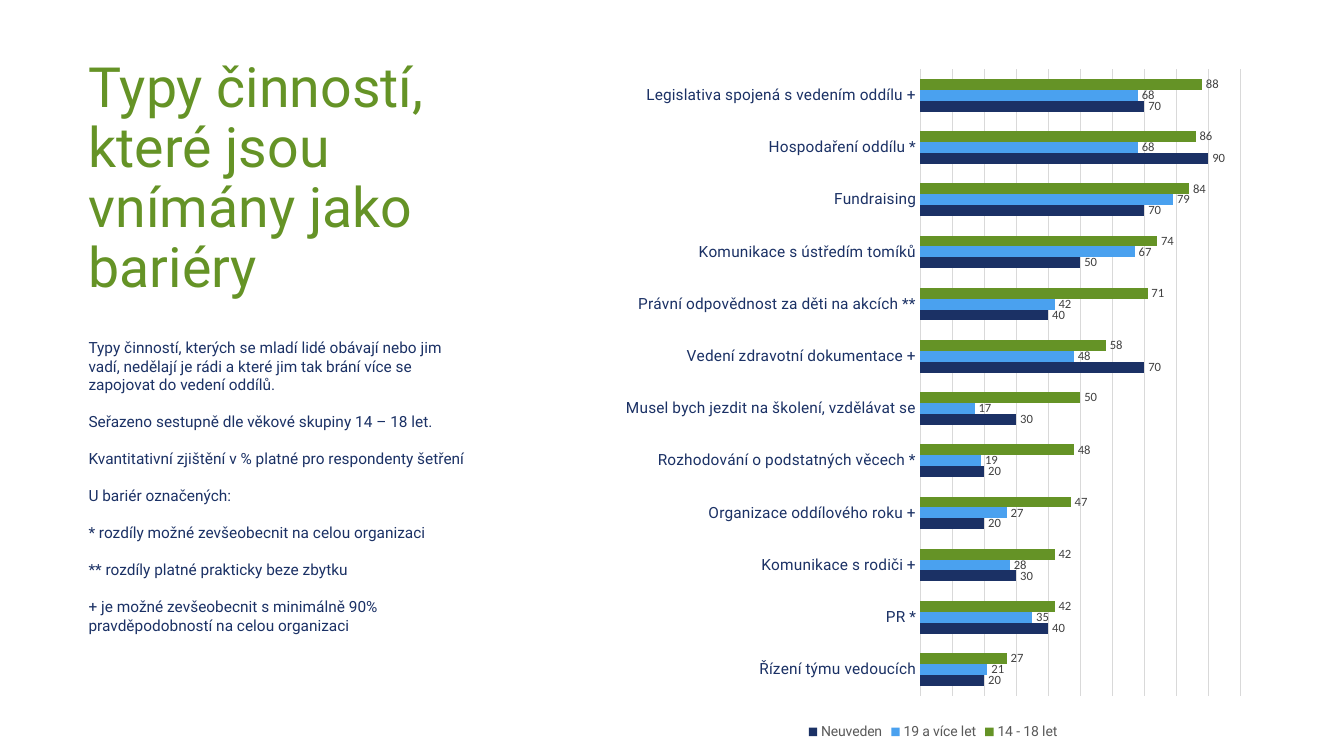
"""Build a slide about activities perceived as barriers."""
from lxml import etree
from pptx import Presentation
from pptx.chart.data import CategoryChartData
from pptx.dml.color import RGBColor
from pptx.enum.chart import XL_CHART_TYPE, XL_LEGEND_POSITION, XL_LABEL_POSITION, XL_TICK_MARK
from pptx.enum.text import MSO_ANCHOR, MSO_AUTO_SIZE, PP_ALIGN
from pptx.oxml import parse_xml
from pptx.oxml.ns import nsdecls
from pptx.util import Inches, Pt

BAR_CLUSTERED = XL_CHART_TYPE.BAR_CLUSTERED
LEGEND_BOTTOM = XL_LEGEND_POSITION.BOTTOM
OUTSIDE_END = XL_LABEL_POSITION.OUTSIDE_END
NO_TICK = XL_TICK_MARK.NONE
MIDDLE = MSO_ANCHOR.MIDDLE
TOP = MSO_ANCHOR.TOP
NO_AUTOFIT = MSO_AUTO_SIZE.NONE
LEFT = PP_ALIGN.LEFT

GREEN = RGBColor(0x65, 0x93, 0x26)
BLUE = RGBColor(0x4A, 0xA1, 0xEF)
NAVY = RGBColor(0x1B, 0x31, 0x65)
GRID_GRAY = RGBColor(0xD9, 0xD9, 0xD9)
LABEL_GRAY = RGBColor(0x40, 0x40, 0x40)
LEGEND_GRAY = RGBColor(0x59, 0x59, 0x59)
BLACK = RGBColor(0, 0, 0)

SLIDE_SIZE = (13.33, 7.5)
TITLE_BOX = (0.78, 0.55, 4.57, 2.46)
NOTES_BOX = (0.78, 3.31, 4, 3.06)
CHART_BOX = (6.08, 0.55, 6.35, 6.83)
PLOT_SHARES = {"x": 0.48, "y": 0.02, "w": 0.5, "h": 0.91}

TITLE_FONT = {"name": "Roboto", "size": Pt(39.6), "color": GREEN}
NOTES_FONT = {"name": "Roboto", "size": Pt(11), "color": NAVY}
LEGEND_FONT = {"name": "Roboto", "size": Pt(10), "color": LEGEND_GRAY}
CHART_FONT = {"name": "Calibri", "size": Pt(10), "color": BLACK}
VALUE_FONT = {"name": "Calibri", "size": Pt(9), "color": LABEL_GRAY}

TITLE = "Typy činností, které jsou vnímány jako bariéry"
NOTES = [
    "Typy činností, kterých se mladí lidé obávají nebo jim vadí, nedělají je rádi "
    "a které jim tak brání více se zapojovat do vedení oddílů.",
    "Seřazeno sestupně dle věkové skupiny 14 – 18 let.",
    "Kvantitativní zjištění v % platné pro respondenty šetření",
    "U bariér označených:",
    "* rozdíly možné zevšeobecnit na celou organizaci",
    "** rozdíly platné prakticky beze zbytku",
    "+ je možné zevšeobecnit s minimálně 90% pravděpodobností na celou organizaci",
]
AGE_GROUPS = [("14 - 18 let", GREEN), ("19 a více let", BLUE), ("Neuveden", NAVY)]
BARRIERS = [
    ("Legislativa spojená s vedením oddílu +", 88, 68, 70),
    ("Hospodaření oddílu *", 86, 68, 90),
    ("Fundraising", 84, 79, 70),
    ("Komunikace s ústředím tomíků", 74, 67, 50),
    ("Právní odpovědnost za děti na akcích **", 71, 42, 40),
    ("Vedení zdravotní dokumentace +", 58, 48, 70),
    ("Musel bych jezdit na školení, vzdělávat se", 50, 17, 30),
    ("Rozhodování o podstatných věcech *", 48, 19, 20),
    ("Organizace oddílového roku +", 47, 27, 20),
    ("Komunikace s rodiči +", 42, 28, 30),
    ("PR *", 42, 35, 40),
    ("Řízení týmu vedoucích", 27, 21, 20),
]


def set_attributes(target, values):
    """Set each named attribute on the target."""
    for name, value in values.items():
        setattr(target, name, value)


def format_font(font, values):
    """Apply a name, size and color to a font."""
    set_attributes(font, {"name": values["name"], "size": values["size"]})
    font.color.rgb = values["color"]


def inches(box):
    """Convert a box of numbers to lengths."""
    return [Inches(length) for length in box]


def write_paragraphs(shape, texts, font, frame_format, paragraph_format):
    """Write formatted paragraphs into a shape."""
    frame = shape.text_frame
    set_attributes(frame, {"word_wrap": True, "auto_size": NO_AUTOFIT, **frame_format})
    for index, text in enumerate(texts):
        paragraph = frame.add_paragraph() if index else frame.paragraphs[0]
        set_attributes(paragraph, {"alignment": LEFT, **paragraph_format})
        run = paragraph.add_run()
        run.text = text
        format_font(run.font, font)


def add_title(slide):
    """Place and fill the title placeholder."""
    title = slide.shapes.title
    set_attributes(title, dict(zip(("left", "top", "width", "height"), inches(TITLE_BOX))))
    write_paragraphs(title, [TITLE], TITLE_FONT, {"vertical_anchor": MIDDLE},
                     {"line_spacing": 0.9, "space_before": Pt(0)})


def add_notes(slide):
    """Add the explanatory text beside the chart."""
    box = slide.shapes.add_textbox(*inches(NOTES_BOX))
    write_paragraphs(box, NOTES, NOTES_FONT, {"vertical_anchor": TOP},
                     {"space_after": Pt(13.2)})


def format_line(line, color):
    """Give a line its color and standard width."""
    line.color.rgb = color
    line.width = Pt(0.75)


def format_axes(chart):
    """Format the category axis and the hidden value axis."""
    categories = chart.category_axis
    set_attributes(categories, {"reverse_order": True, "major_tick_mark": NO_TICK,
                                "minor_tick_mark": NO_TICK})
    format_font(categories.tick_labels.font, NOTES_FONT)
    format_line(categories.format.line, GRID_GRAY)
    values = chart.value_axis
    set_attributes(values, {"visible": False, "has_major_gridlines": True,
                            "minimum_scale": 0, "maximum_scale": 100, "major_unit": 10})
    format_line(values.major_gridlines.format.line, GRID_GRAY)


def format_series(plot):
    """Color the bars and label their values."""
    set_attributes(plot, {"gap_width": 182, "overlap": 0, "vary_by_categories": False})
    for series, (_, color) in zip(plot.series, AGE_GROUPS):
        series.format.fill.solid()
        series.format.fill.fore_color.rgb = color
        labels = series.data_labels
        set_attributes(labels, {"show_value": True, "position": OUTSIDE_END})
        format_font(labels.font, VALUE_FONT)


def set_plot_layout(chart):
    """Fix the inner plot area as shares of the chart."""
    plot_area = chart.plots[0]._element.getparent()
    for old in plot_area.findall("{*}layout"):
        plot_area.remove(old)
    layout = parse_xml(f"<c:layout {nsdecls('c')}><c:manualLayout>"
                       '<c:layoutTarget val="inner"/><c:xMode val="edge"/><c:yMode val="edge"/>'
                       "</c:manualLayout></c:layout>")
    for name, share in PLOT_SHARES.items():
        tag = etree.QName(layout.nsmap["c"], name)
        etree.SubElement(layout[0], tag).set("val", str(share))
    plot_area.insert(0, layout)


def add_barrier_chart(slide):
    """Add the bar chart of barriers by age group."""
    names, *columns = zip(*BARRIERS)
    data = CategoryChartData()
    data.categories = names
    for (group, _), column in zip(AGE_GROUPS, columns):
        data.add_series(group, column)
    chart = slide.shapes.add_chart(BAR_CLUSTERED, *inches(CHART_BOX), data).chart
    set_attributes(chart, {"has_title": False, "has_legend": True})
    format_font(chart.font, CHART_FONT)
    set_attributes(chart.legend, {"position": LEGEND_BOTTOM, "include_in_layout": False})
    format_font(chart.legend.font, LEGEND_FONT)
    format_axes(chart)
    format_series(chart.plots[0])
    set_plot_layout(chart)


def main():
    """Build and save the presentation."""
    presentation = Presentation()
    presentation.slide_width, presentation.slide_height = inches(SLIDE_SIZE)
    slide = presentation.slides.add_slide(presentation.slide_layouts[5])
    add_title(slide)
    add_notes(slide)
    add_barrier_chart(slide)
    presentation.save("out.pptx")


if __name__ == "__main__":
    main()
